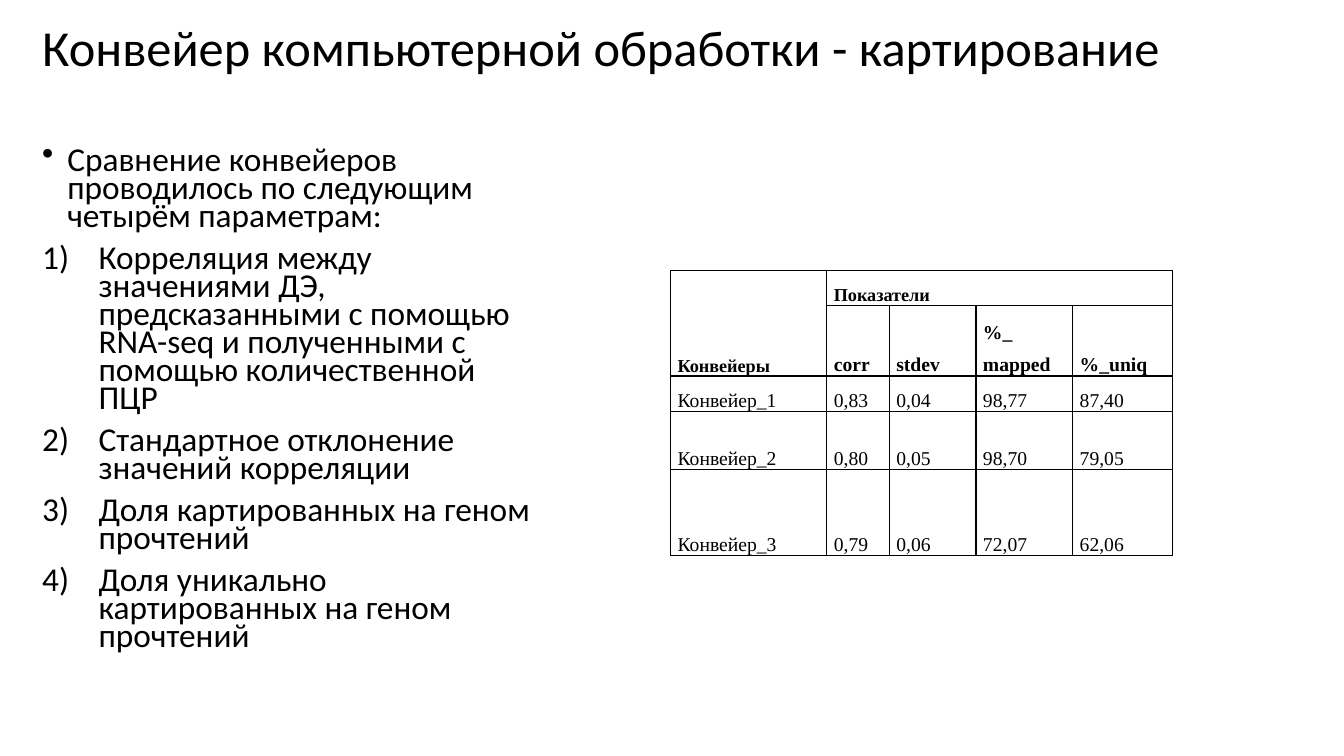
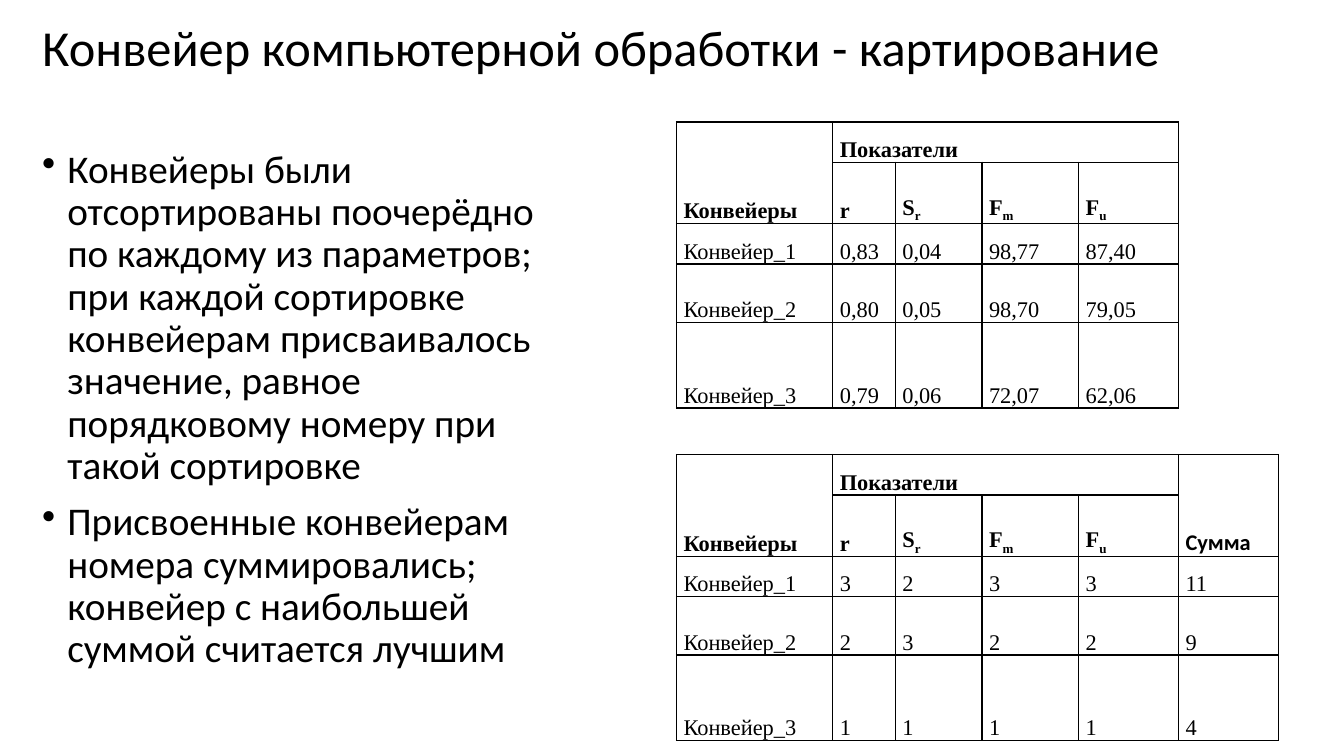
from lxml.etree import SubElement
from pptx import Presentation
from pptx.dml.color import RGBColor
from pptx.enum.text import MSO_ANCHOR as Anchor, PP_ALIGN as Align
from pptx.oxml.ns import qn
from pptx.util import Inches, Pt

BLACK = RGBColor(0x00, 0x00, 0x00)
WHITE = RGBColor(0xFF, 0xFF, 0xFF)
SANS, SERIF = "Calibri", "Times New Roman"
SLIDE_WIDTH, SLIDE_HEIGHT = Inches(13.33), Inches(7.5)

# Boxes: left, top, width, height in percent of the slide
TITLE_BOX = (2.4, 0.53, 94.9, 12.13)
BODY_BOX = (2.4, 19.07, 38.26, 71.07)
# Table columns in percent of the slide's width, rows in percent of its height
COLUMNS = (11.63, 4.65, 6.45, 7.2, 7.43)
SUM_COLUMN = 7.43
ROWS = (4.67, 8.13, 4.67, 7.73, 11.33)

TITLE = "Конвейер компьютерной обработки - картирование"
PIPELINES = ("Конвейер_1", "Конвейер_2", "Конвейер_3")
SCORES = (
    ("0,83", "0,04", "98,77", "87,40"),
    ("0,80", "0,05", "98,70", "79,05"),
    ("0,79", "0,06", "72,07", "62,06"),
)
RANKS = ((3, 2, 3, 3), (2, 3, 2, 2), (1, 1, 1, 1))
NAMES = ("corr", "stdev", "%_\nmapped", "%_uniq")
SYMBOLS = ("r", ("S", "r"), ("F", "m"), ("F", "u"))  # (base, subscript)

CRITERIA_INTRO = "Сравнение конвейеров проводилось по следующим четырём параметрам:"
CRITERIA = (
    "Корреляция между значениями ДЭ, предсказанными с помощью RNA-seq "
    "и полученными с помощью количественной ПЦР",
    "Стандартное отклонение значений корреляции",
    "Доля картированных на геном прочтений",
    "Доля уникально картированных на геном прочтений",
)
RANKING_STEPS = (
    "Конвейеры были отсортированы поочерёдно по каждому из параметров; "
    "при каждой сортировке конвейерам присваивалось значение, равное "
    "порядковому номеру при такой сортировке",
    "Присвоенные конвейерам номера суммировались; "
    "конвейер с наибольшей суммой считается лучшим",
)

BULLET = {"indent": 0.25, "tag": "a:buChar", "mark": {"char": "•"}}
NUMBER = {"indent": 0.56, "tag": "a:buAutoNum", "mark": {"type": "arabicParenR"}}


def across(percent):
    return round(SLIDE_WIDTH * percent / 100)


def down(percent):
    return round(SLIDE_HEIGHT * percent / 100)


def set_all(target, **values):
    for name, value in values.items():
        setattr(target, name, value)


def add_run(paragraph, text, size, face=SANS, bold=False):
    run = paragraph.add_run()
    run.text = text
    set_all(run.font, size=Pt(size), name=face, bold=bold)
    run.font.color.rgb = BLACK
    return run


def add_text_frame(slide, box, anchor):
    left, top, width, height = box
    frame = slide.shapes.add_textbox(
        across(left), down(top), across(width), down(height)).text_frame
    set_all(frame, word_wrap=True, vertical_anchor=anchor)
    return frame


def add_title(slide):
    paragraph = add_text_frame(slide, TITLE_BOX, Anchor.MIDDLE).paragraphs[0]
    paragraph.line_spacing = 0.9
    add_run(paragraph, TITLE, 36)


def add_list(slide, items, size, spacing):
    """Add the body list; each item is a text and its marker style."""
    frame = add_text_frame(slide, BODY_BOX, Anchor.TOP)
    for index, (text, style) in enumerate(items):
        paragraph = frame.add_paragraph() if index else frame.paragraphs[0]
        set_all(paragraph, line_spacing=spacing, space_before=Pt(10))
        properties = paragraph._p.get_or_add_pPr()
        indent = Inches(style["indent"])
        properties.set("marL", str(indent))
        properties.set("indent", str(-indent))
        SubElement(properties, qn(style["tag"]), style["mark"])
        add_run(paragraph, text, size)


def add_borders(cell):
    properties = cell._tc.get_or_add_tcPr()
    for side in ("lnL", "lnR", "lnT", "lnB"):
        line = SubElement(properties, qn(f"a:{side}"), w=str(Pt(1)))
        fill = SubElement(line, qn("a:solidFill"))
        SubElement(fill, qn("a:srgbClr"), val=str(BLACK))


def format_cell(cell):
    set_all(cell, margin_left=Inches(0.07), margin_right=Inches(0.07),
            margin_top=0, margin_bottom=0, vertical_anchor=Anchor.BOTTOM)
    add_borders(cell)
    cell.fill.solid()
    cell.fill.fore_color.rgb = WHITE


def write_cell(cell, content, size, spacing=1.5, **font):
    """Write text, one paragraph a line, or a (base, subscript) pair."""
    base, subscript = content if isinstance(content, tuple) else (content, "")
    for index, text in enumerate(str(base).split("\n")):
        frame = cell.text_frame
        paragraph = frame.add_paragraph() if index else frame.paragraphs[0]
        set_all(paragraph, alignment=Align.JUSTIFY, line_spacing=spacing)
        add_run(paragraph, text, size, **font)
    if subscript:
        run = add_run(paragraph, subscript, size, **font)
        run.font._element.set("baseline", "-25000")


def add_scores(slide, left, top, labels, values, size, head_size,
               with_sum=False, spacing=1.5):
    """Add a table of pipelines against indicators, with an optional sum."""
    widths = COLUMNS + (SUM_COLUMN,) * with_sum
    table = slide.shapes.add_table(
        len(ROWS), len(widths), across(left), down(top),
        across(sum(widths)), down(sum(ROWS))).table
    set_all(table, first_row=False, horz_banding=False)
    for column, width in zip(table.columns, widths):
        column.width = across(width)
    for row, height in zip(table.rows, ROWS):
        row.height = down(height)
    for cell in table.iter_cells():
        format_cell(cell)

    heading = {"face": SERIF, "bold": True}
    table.cell(0, 0).merge(table.cell(1, 0))
    table.cell(0, 1).merge(table.cell(0, len(labels)))
    write_cell(table.cell(0, 0), "Конвейеры", head_size, **heading)
    write_cell(table.cell(0, 1), "Показатели", head_size, **heading)
    for column, label in enumerate(labels, 1):
        write_cell(table.cell(1, column), label, size, **heading)
    if with_sum:
        last = len(widths) - 1
        table.cell(0, last).merge(table.cell(1, last))
        write_cell(table.cell(0, last), "Сумма", head_size, bold=True)

    for row, (pipeline, numbers) in enumerate(zip(PIPELINES, values), 2):
        write_cell(table.cell(row, 0), pipeline, size, face=SERIF)
        total = (sum(numbers),) if with_sum else ()
        for column, number in enumerate(numbers + total, 1):
            write_cell(table.cell(row, column), number, size, spacing, face=SERIF)


def main():
    deck = Presentation()
    set_all(deck, slide_width=SLIDE_WIDTH, slide_height=SLIDE_HEIGHT)
    blank = deck.slide_layouts[6]

    criteria = deck.slides.add_slide(blank)
    add_title(criteria)
    items = [(CRITERIA_INTRO, BULLET)] + [(text, NUMBER) for text in CRITERIA]
    add_list(criteria, items, 23.8, 0.7)
    add_scores(criteria, 49.89, 35.73, NAMES, SCORES, 14, 13)

    ranking = deck.slides.add_slide(blank)
    add_title(ranking)
    add_list(ranking, [(text, BULLET) for text in RANKING_STEPS], 28, 0.9)
    add_scores(ranking, 50.34, 60.13, SYMBOLS, RANKS, 16, 16,
               with_sum=True, spacing=1.0)
    add_scores(ranking, 50.34, 16.13, SYMBOLS, SCORES, 16, 16)

    deck.save("out.pptx")


if __name__ == "__main__":
    main()
